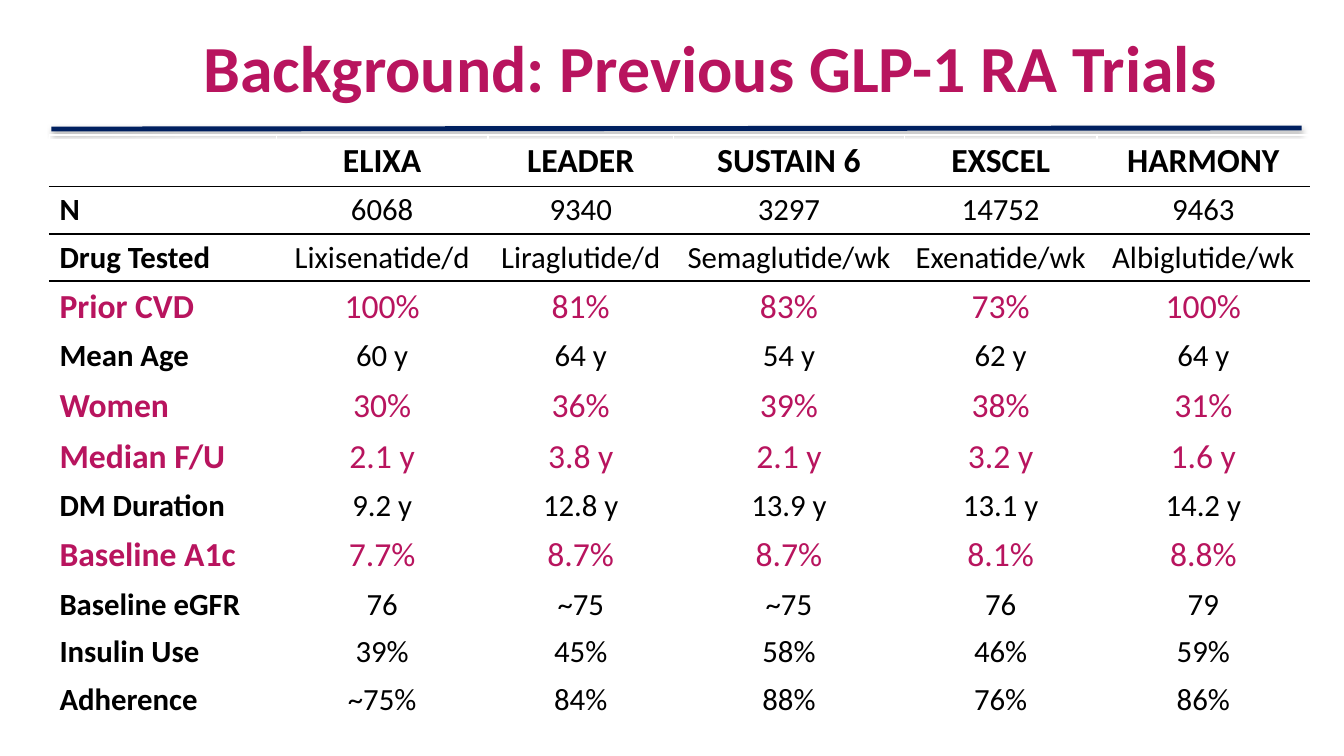
"""Build a slide that compares earlier GLP-1 RA trials in a table."""
import pptx
import pptx.util
import pptx.oxml
import pptx.oxml.ns
import pptx.dml.color
import pptx.enum.text
import pptx.enum.shapes

Inches, Pt = pptx.util.Inches, pptx.util.Pt
ALIGN = pptx.enum.text.PP_ALIGN
ANCHOR = pptx.enum.text.MSO_ANCHOR
HUES = {"ink": "000000", "rose": "B8145E", "navy": "002060"}
SPACE = pptx.oxml.ns.nsdecls("a")

HEAD = ["", "ELIXA", "LEADER", "SUSTAIN 6", "EXSCEL", "HARMONY"]
DATA = [
    ["N", "6068", "9340", "3297", "14752", "9463"],
    ["Drug Tested", "Lixisenatide/d", "Liraglutide/d", "Semaglutide/wk",
     "Exenatide/wk", "Albiglutide/wk"],
    ["Prior CVD", "100%", "81%", "83%", "73%", "100%"],
    ["Mean Age", "60 y", "64 y", "54 y", "62 y", "64 y"],
    ["Women", "30%", "36%", "39%", "38%", "31%"],
    ["Median F/U", "2.1 y", "3.8 y", "2.1 y", "3.2 y", "1.6 y"],
    ["DM Duration", "9.2 y", "12.8 y", "13.9 y", "13.1 y", "14.2 y"],
    ["Baseline A1c", "7.7%", "8.7%", "8.7%", "8.1%", "8.8%"],
    ["Baseline eGFR", "76", "~75", "~75", "76", "79"],
    ["Insulin Use", "39%", "45%", "58%", "46%", "59%"],
    ["Adherence", "~75%", "84%", "88%", "76%", "86%"],
]
WIDTHS = [2.25, 2.1, 1.84, 2.29, 1.91, 2.11]
ROSY = {"Prior CVD", "Women", "Median F/U", "Baseline A1c"}
RULES = {0: {"B": 1}, 1: {"T": 1, "B": 1.5}, 2: {"T": 1.5}}


class Deck:
    """Holds the style and the current slide."""

    def __init__(self, face):
        self.face = face
        self.show = pptx.Presentation()
        self.show.slide_width = Inches(13.33)
        self.show.slide_height = Inches(7.5)
        self.slide = self.show.slides.add_slide(self.show.slide_layouts[6])

    def label(self, para, text, size, hue, bold, align):
        para.text = text
        para.alignment = align
        look = {"name": self.face, "size": Pt(size), "bold": bold}
        for key, value in look.items():
            setattr(para.font, key, value)
        para.font.color.rgb = pptx.dml.color.RGBColor.from_string(HUES[hue])

    def title(self, text, *area):
        box = self.slide.shapes.add_textbox(*map(Inches, area))
        frame = box.text_frame
        frame.word_wrap = True
        frame.vertical_anchor = ANCHOR.MIDDLE
        para = frame.paragraphs[0]
        self.label(para, text, 47, "rose", True, ALIGN.LEFT)
        para.line_spacing = 0.9

    def line(self, hue, width, *ends):
        kind = pptx.enum.shapes.MSO_CONNECTOR.STRAIGHT
        line = self.slide.shapes.add_connector(kind, *map(Inches, ends))
        line.line.width = Pt(width)
        line.line.color.rgb = pptx.dml.color.RGBColor.from_string(HUES[hue])
        line._element.spPr.append(pptx.oxml.parse_xml(
            f'<a:effectLst {SPACE}><a:outerShdw blurRad="{Pt(3.1)}" '
            f'dist="{Pt(1.8)}" dir="5400000" rotWithShape="0">'
            f'<a:srgbClr val="{HUES["ink"]}"><a:alpha val="35000"/>'
            '</a:srgbClr></a:outerShdw></a:effectLst>'))

    def rule(self, cell, side, width):
        cell._tc.get_or_add_tcPr().append(pptx.oxml.parse_xml(
            f'<a:ln{side} {SPACE} w="{Pt(width)}"><a:solidFill>'
            f'<a:srgbClr val="{HUES["ink"]}"/></a:solidFill></a:ln{side}>'))

    def table(self, rows, widths, left, top, high):
        area = map(Inches, (left, top, sum(widths), high * len(rows)))
        table = self.slide.shapes.add_table(
            len(rows), len(widths), *area).table
        for key in ("first_row", "horz_banding"):
            setattr(table, key, False)
        for col, width in zip(table.columns, widths):
            col.width = Inches(width)
        for r, row in enumerate(rows):
            table.rows[r].height = Inches(high)
            rosy = row[0] in ROSY
            size = 24 if rosy or r == 0 else 22
            hue = "rose" if rosy else "ink"
            for c, text in enumerate(row):
                cell = table.cell(r, c)
                for side, width in RULES.get(r, {}).items():
                    self.rule(cell, side, width)
                cell.fill.background()
                align = ALIGN.CENTER if c else ALIGN.LEFT
                para = cell.text_frame.paragraphs[0]
                self.label(para, text, size, hue, r == 0 or c == 0, align)


def main():
    deck = Deck("Calibri")
    deck.line("navy", 3.5, 0.51, 1.28, 12.91, 1.27)
    deck.table([HEAD] + DATA, WIDTHS, 0.49, 1.34, 0.43)
    deck.title("Background: Previous GLP-1 RA Trials", 1.92, 0.08, 11.23, 1.25)
    deck.show.save("out.pptx")


if __name__ == "__main__":
    main()
